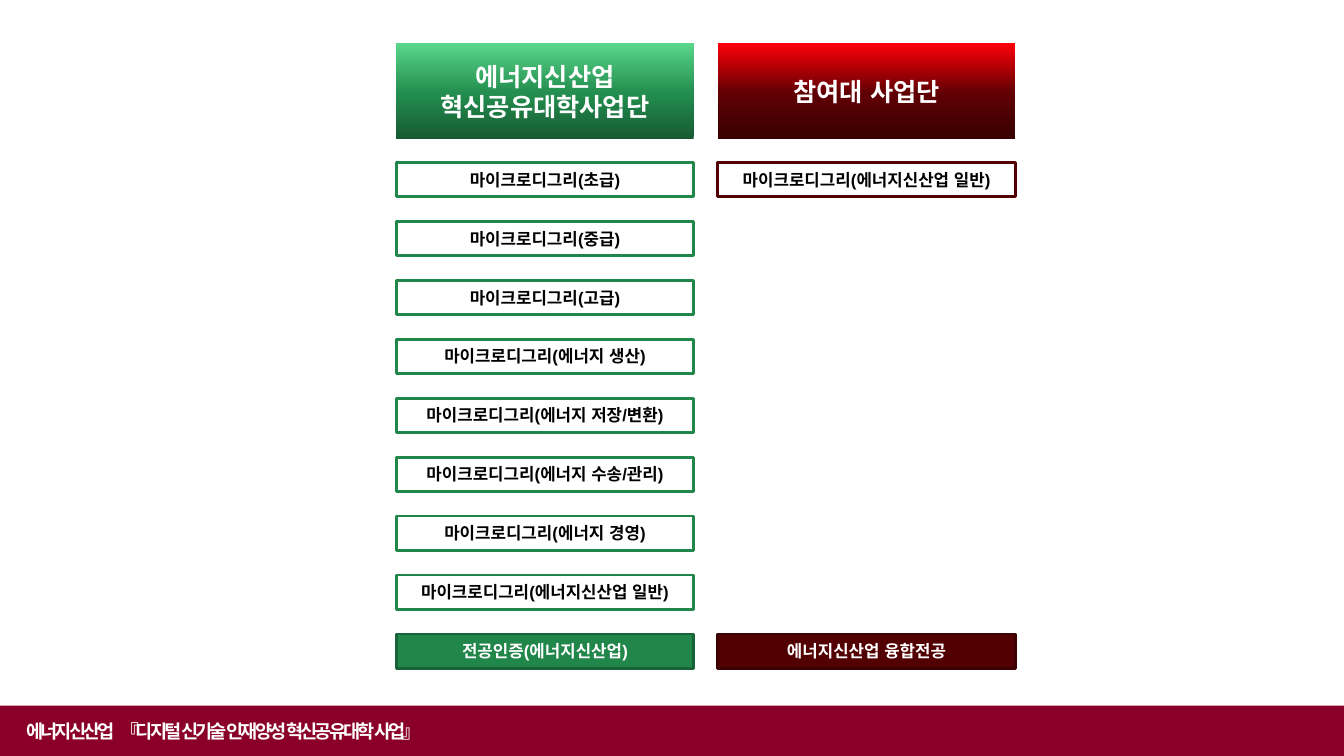
from copy import deepcopy

from lxml.etree import SubElement
from pptx import Presentation
from pptx.dml.color import RGBColor
from pptx.enum.shapes import MSO_SHAPE as Preset
from pptx.enum.text import MSO_ANCHOR as Anchor, MSO_AUTO_SIZE as AutoSize, PP_ALIGN as Align
from pptx.oxml.ns import qn
from pptx.util import Inches, Pt

FONT = "Arial"
WHITE = RGBColor(0xFF, 0xFF, 0xFF)
BLACK = RGBColor(0x00, 0x00, 0x00)
CRIMSON = RGBColor(0x8B, 0x00, 0x28)
GREEN = RGBColor(0x21, 0x86, 0x4A)
DARK_GREEN = RGBColor(0x18, 0x63, 0x37)
MAROON = RGBColor(0x53, 0x00, 0x03)
DARK_MAROON = RGBColor(0x3D, 0x00, 0x02)
GREEN_STOPS = [
    (0, RGBColor(0x16, 0x5A, 0x32)),
    (0.48, RGBColor(0x23, 0x8E, 0x4F)),
    (1, RGBColor(0x5A, 0xD6, 0x8C)),
]
RED_STOPS = [
    (0, RGBColor(0x38, 0x00, 0x02)),
    (0.48, RGBColor(0x60, 0x00, 0x03)),
    (1, RGBColor(0xFE, 0x00, 0x09)),
]

SLIDE_WIDTH, SLIDE_HEIGHT = 13.33, 7.5
COLUMN_TOP, COLUMN_WIDTH = 0.43, 2.95
HEADER_HEIGHT = 0.95
FIRST_ROW_OFFSET, ROW_PITCH, ROW_HEIGHT = 1.18, 0.585, 0.34
LAST_ROW = 8


def add_run(paragraph, text, size, color, spacing=0):
    run = paragraph.add_run()
    run.text = text
    font = run.font
    font.name = FONT
    font.size = Pt(size)
    font.bold = True
    font.color.rgb = color
    properties = run._r.get_or_add_rPr()
    properties.set("spc", str(spacing * 100))
    SubElement(properties, qn("a:ea"), typeface=FONT)


def add_box(slide, left, top, width, height, lines=(), size=12, color=BLACK):
    shape = slide.shapes.add_shape(
        Preset.RECTANGLE, Inches(left), Inches(top), Inches(width), Inches(height)
    )
    shape.shadow.inherit = False
    shape.line.fill.background()
    frame = shape.text_frame
    frame.vertical_anchor = Anchor.MIDDLE
    for index, text in enumerate(lines):
        paragraph = frame.add_paragraph() if index else frame.paragraphs[0]
        paragraph.alignment = Align.CENTER
        add_run(paragraph, text, size, color)
    return shape


def fill_gradient(shape, stops):
    fill = shape.fill
    fill.gradient()
    fill.gradient_angle = 90
    stop_list = shape._element.spPr.find(".//" + qn("a:gsLst"))
    stop_list.append(deepcopy(stop_list[-1]))
    for stop, (position, color) in zip(fill.gradient_stops, stops):
        stop.position = position
        stop.color.rgb = color


def add_column(slide, left, top, width, heading, stops, degrees, major, color, dark_color):
    header = add_box(slide, left, top, width, HEADER_HEIGHT, heading, 18, WHITE)
    fill_gradient(header, stops)
    rows = [(row, text, BLACK, WHITE, color) for row, text in enumerate(degrees)]
    rows.append((LAST_ROW, major, WHITE, color, dark_color))
    for row, text, text_color, fill_color, line_color in rows:
        row_top = top + FIRST_ROW_OFFSET + row * ROW_PITCH
        box = add_box(slide, left, row_top, width, ROW_HEIGHT, [text], 12, text_color)
        box.fill.solid()
        box.fill.fore_color.rgb = fill_color
        box.line.color.rgb = line_color
        box.line.width = Pt(2)


def add_title_bar(slide, left, top, width, height):
    bar = add_box(slide, left, top, width, height)
    bar.fill.solid()
    bar.fill.fore_color.rgb = CRIMSON
    title = slide.shapes.title
    title._element.addprevious(bar._element)
    title.left, title.top = Inches(left + 0.16), Inches(top + 0.09)
    title.width, title.height = Inches(width / 2), Inches(0.33)
    frame = title.text_frame
    frame.auto_size = AutoSize.NONE
    frame.word_wrap = True
    frame.vertical_anchor = Anchor.MIDDLE
    paragraph = frame.paragraphs[0]
    paragraph.alignment = Align.LEFT
    add_run(paragraph, "에너지신산업", 13.3, WHITE, -2)
    add_run(paragraph, " ", 13.3, WHITE)
    add_run(paragraph, "『디지털 신기술 인재양성 혁신공유대학 사업』", 13.3, WHITE, -2)


def main():
    presentation = Presentation()
    presentation.slide_width = Inches(SLIDE_WIDTH)
    presentation.slide_height = Inches(SLIDE_HEIGHT)
    slide = presentation.slides.add_slide(presentation.slide_layouts.get_by_name("Title Only"))
    add_title_bar(slide, 0, 7, SLIDE_WIDTH, 0.5)

    subjects = [
        "초급", "중급", "고급", "에너지 생산", "에너지 저장/변환",
        "에너지 수송/관리", "에너지 경영", "에너지신산업 일반",
    ]
    degrees = [f"마이크로디그리({subject})" for subject in subjects]
    add_column(
        slide, 3.93, COLUMN_TOP, COLUMN_WIDTH, ["에너지신산업", "혁신공유대학사업단"],
        GREEN_STOPS, degrees, "전공인증(에너지신산업)", GREEN, DARK_GREEN,
    )
    add_column(
        slide, 7.12, COLUMN_TOP, COLUMN_WIDTH, ["참여대 사업단"],
        RED_STOPS, degrees[-1:], "에너지신산업 융합전공", MAROON, DARK_MAROON,
    )
    presentation.save("out.pptx")


if __name__ == "__main__":
    main()
